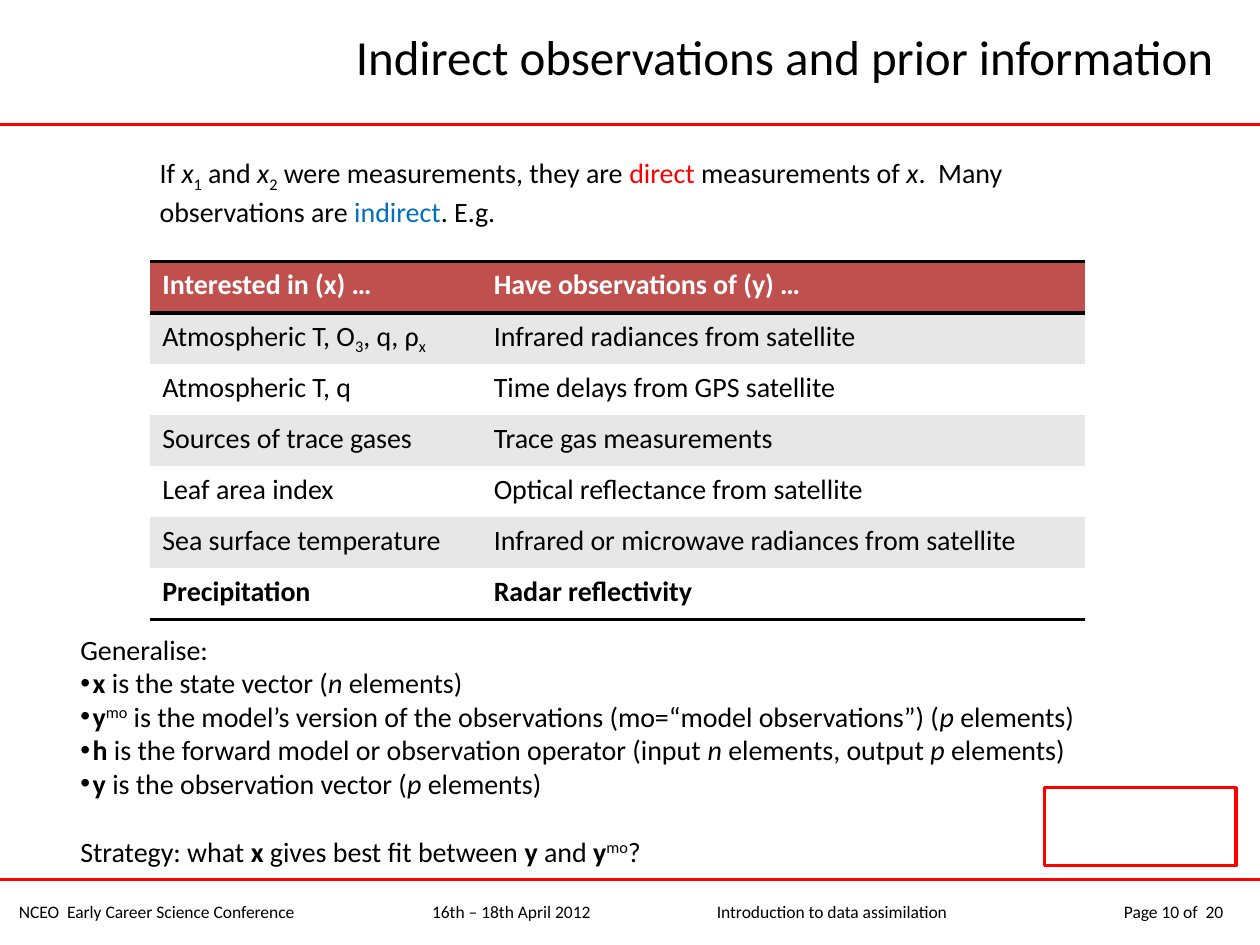
from lxml.etree import SubElement, fromstring
from pptx import Presentation
from pptx.dml.color import RGBColor as Rgb
from pptx.enum.shapes import MSO_CONNECTOR as Conn, MSO_SHAPE as Shape
from pptx.enum.text import MSO_ANCHOR as Anchor, PP_ALIGN as Align
from pptx.oxml.ns import nsdecls, qn
from pptx.util import Cm, Pt

HEX = {
    "black": "000000", "white": "FFFFFF", "red": "FF0000",
    "blue": "0070C0", "head": "C0504D", "band": "E7E7E7",
}
FONT = "Calibri"
NO_GRID = "{2D5ABB26-0587-4C30-8999-92F81FD0307C}"
SHIFT = {"sub": "-25000", "sup": "30000"}

INTRO = [
    "If ", ("x", "i"), ("1", "sub"), " and ", ("x", "i"), ("2", "sub"),
    " were measurements, they are ", ("direct", "red"), " measurements of ",
    ("x", "i"), ".  Many observations are ", ("indirect", "blue"), ". E.g.",
]
ROWS = [
    ("Interested in (x) …", "Have observations of (y) …"),
    (["Atmospheric T, O", ("3", "sub"), ", q, ρ", ("x", "sub")],
     "Infrared radiances from satellite"),
    ("Atmospheric T, q", "Time delays from GPS satellite"),
    ("Sources of trace gases", "Trace gas measurements"),
    ("Leaf area index", "Optical reflectance from satellite"),
    ("Sea surface temperature",
     "Infrared or microwave radiances from satellite"),
    ("Precipitation", "Radar reflectivity"),
]
TERMS = [
    [("x", "b"), " is the state vector (", ("n", "i"), " elements)"],
    [("y", "b"), ("mo", "sup"),
     " is the model’s version of the observations "
     "(mo=“model observations”) (", ("p", "i"), " elements)"],
    [("h", "b"), " is the forward model or observation operator (input ",
     ("n", "i"), " elements, output ", ("p", "i"), " elements)"],
    [("y", "b"), " is the observation vector (", ("p", "i"), " elements)"],
]
STRATEGY = [
    "Strategy: what ", ("x", "b"), " gives best fit between ", ("y", "b"),
    " and ", ("y", "b"), ("mo", "sup"), "?",
]
FOOTER = "\t".join([
    "NCEO  Early Career Science Conference", "16th – 18th April 2012",
    "Introduction to data assimilation", "Page 10 of  20",
])
STOPS = [(8.33, "l"), (14.07, "l"), (24.28, "r")]


def color(name):
    return Rgb.from_string(HEX[name])


def write(para, parts, size=16, ink="black", bold=False, align=Align.LEFT,
          before=0, bullet=False, tabs=()):
    """Fill a paragraph; a part is plain text or a (text, mark) pair."""
    para.alignment = align
    if before:
        para.space_before = Pt(before)
    props = para._p.get_or_add_pPr()
    if bullet:
        props.set("marL", str(Cm(0.25)))
        props.set("indent", str(-Cm(0.25)))
        SubElement(props, qn("a:buFont"), typeface="Arial")
        SubElement(props, qn("a:buChar"), char="•")
    if tabs:
        stops = SubElement(props, qn("a:tabLst"))
        for pos, side in tabs:
            SubElement(stops, qn("a:tab"), pos=str(Cm(pos)), algn=side)
    for part in [parts] if isinstance(parts, str) else parts:
        text, mark = (part, "") if isinstance(part, str) else part
        run = para.add_run()
        run.text = text
        font = run.font
        font.name, font.size = FONT, Pt(size)
        font.bold = bold or mark == "b"
        font.italic = mark == "i"
        font.color.rgb = color(mark if mark in HEX else ink)
        if mark in SHIFT:
            run._r.get_or_add_rPr().set("baseline", SHIFT[mark])


def add_box(slide, left, top, width, height, anchor=Anchor.TOP):
    box = slide.shapes.add_textbox(Cm(left), Cm(top), Cm(width), Cm(height))
    frame = box.text_frame
    frame.word_wrap = True
    frame.vertical_anchor = anchor
    return frame


def add_rule(slide, left, y):
    rule = slide.shapes.add_connector(
        Conn.STRAIGHT, Cm(left), Cm(y), Cm(25.4), Cm(y))
    rule.line.color.rgb = color("red")
    rule.line.width = Pt(1.5)
    SubElement(rule._element.spPr, qn("a:effectLst"))


def add_edges(cell, *tags):
    """Draw black borders; they must stand before the cell's fill."""
    props = cell._tc.get_or_add_tcPr()
    for spot, tag in enumerate(tags):
        props.insert(spot, fromstring(
            f'<a:{tag} {nsdecls("a")} w="{Pt(2)}"><a:solidFill>'
            f'<a:srgbClr val="{HEX["black"]}"/></a:solidFill></a:{tag}>'))


def add_grid(slide):
    last = len(ROWS) - 1
    table = slide.shapes.add_table(
        len(ROWS), 2, Cm(3.02), Cm(5.28), Cm(18.85), Cm(7.21)).table
    table._tbl.tblPr.find(qn("a:tableStyleId")).text = NO_GRID
    for col, width in zip(table.columns, (6.68, 12.17)):
        col.width = Cm(width)
    for r, row in enumerate(ROWS):
        table.rows[r].height = Cm(1.03)
        fill = "head" if r == 0 else "band" if r % 2 else "white"
        for c, parts in enumerate(row):
            cell = table.cell(r, c)
            cell.fill.solid()
            cell.fill.fore_color.rgb = color(fill)
            write(cell.text_frame.paragraphs[0], parts, bold=r in (0, last),
                  ink="black" if r else "white")
            if r == 0:
                add_edges(cell, "lnT", "lnB")
            elif r == last:
                add_edges(cell, "lnB")


def add_frame(slide):
    frame = slide.shapes.add_shape(
        Shape.RECTANGLE, Cm(21.06), Cm(15.88), Cm(3.86), Cm(1.57))
    frame.shadow.inherit = False
    frame.fill.background()
    frame.line.color.rgb = color("red")
    frame.line.width = Pt(2)


def main():
    deck = Presentation()
    deck.slide_width, deck.slide_height = Cm(25.4), Cm(19.05)
    slide = deck.slides.add_slide(deck.slide_layouts[6])

    add_rule(slide, 0, 2.51)
    add_rule(slide, -0.1, 17.73)
    foot = add_box(slide, 0.13, 18.03, 25.17, 0.69)
    write(foot.paragraphs[0], FOOTER, size=10, tabs=STOPS)

    title = add_box(slide, 4.9, 0.36, 19.81, 1.55, Anchor.MIDDLE)
    write(title.paragraphs[0], "Indirect observations and prior information",
          size=28, align=Align.RIGHT)
    intro = add_box(slide, 2.97, 3.02, 19.08, 1.63)
    write(intro.paragraphs[0], INTRO)

    add_grid(slide)

    body = add_box(slide, 1.37, 12.62, 21.31, 5.05)
    write(body.paragraphs[0], "Generalise:")
    for term in TERMS:
        write(body.add_paragraph(), term, bullet=True)
    write(body.add_paragraph(), STRATEGY, before=19.5)
    add_frame(slide)

    deck.save("out.pptx")


if __name__ == "__main__":
    main()
